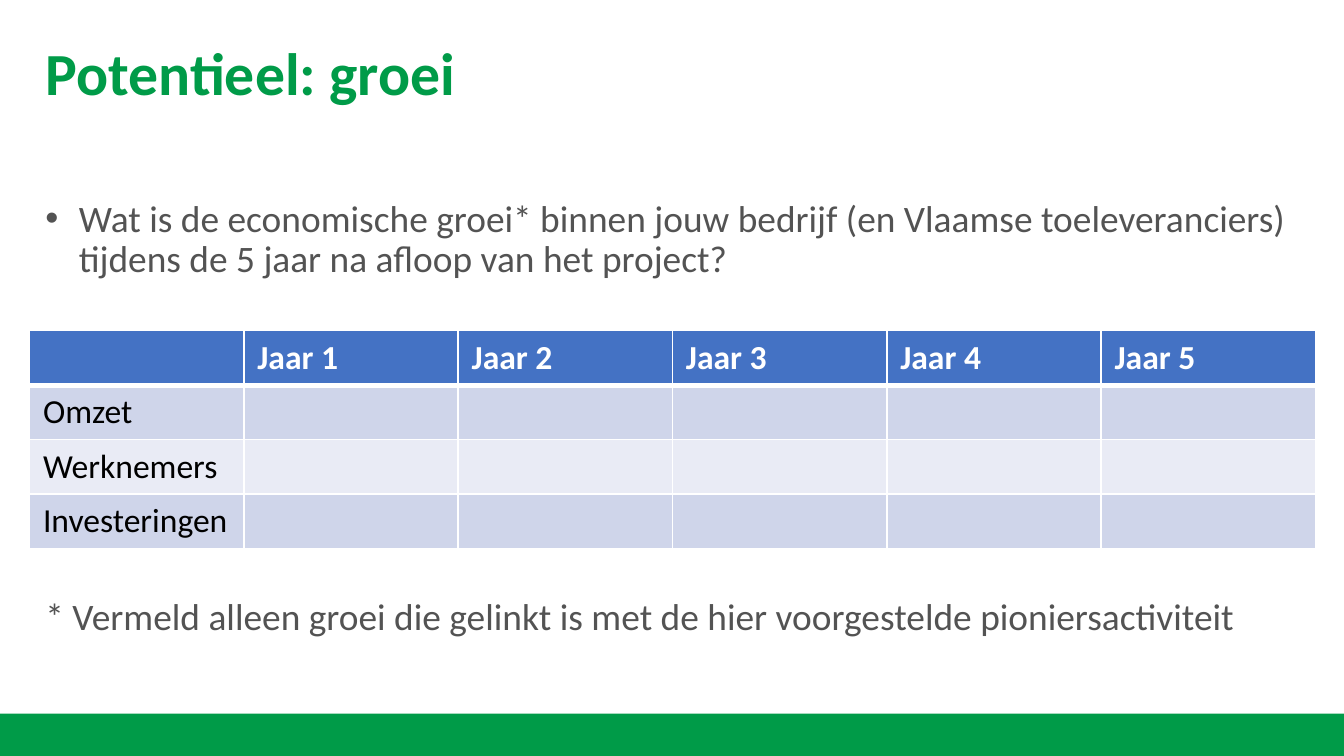
from dataclasses import dataclass

from lxml.etree import SubElement
from pptx import Presentation
from pptx.dml.color import RGBColor
from pptx.enum.shapes import MSO_SHAPE
from pptx.enum.text import MSO_ANCHOR
from pptx.oxml.ns import qn
from pptx.util import Cm, Pt

GREEN, GREY, BLUE, WHITE, BLACK = "009B48", "535353", "4472C4", "FFFFFF", "000000"
BANDS = ("CFD5EA", "E9EBF5")
FONT = "Calibri"
MARGIN, TEXT_W = 0.86, 23.75
COL_W, ROW_H = 4.05, 1.03

HEADER = ["", *(f"Jaar {year}" for year in range(1, 6))]
ROW_LABELS = ["Omzet", "Werknemers", "Investeringen"]


@dataclass
class Box:
    left: float
    top: float
    width: float
    height: float

    def lengths(self):
        return Cm(self.left), Cm(self.top), Cm(self.width), Cm(self.height)


def rgb(value: str) -> RGBColor:
    return RGBColor.from_string(value)


def write(p, text: str, *, size: float, color: str, bold: bool = False,
          bullet: bool = False, before: float = 0, spacing: float = 1) -> None:
    if bullet:
        pPr = p._p.get_or_add_pPr()
        pPr.set("marL", str(Cm(0.63)))
        pPr.set("indent", str(-Cm(0.63)))
        SubElement(pPr, qn("a:buFont"), typeface="Arial")
        SubElement(pPr, qn("a:buChar"), char="•")
    p.line_spacing = spacing
    if before:
        p.space_before = Pt(before)
    r = p.add_run()
    r.text = text
    r.font.name, r.font.size, r.font.bold = FONT, Pt(size), bold
    r.font.color.rgb = rgb(color)


def add_text_frame(s, box: Box, anchor=MSO_ANCHOR.TOP):
    tf = s.shapes.add_textbox(*box.lengths()).text_frame
    tf.word_wrap = True
    tf.vertical_anchor = anchor
    tf.margin_left = tf.margin_right = tf.margin_top = tf.margin_bottom = 0
    return tf


def set_borders(cell, **widths: float) -> None:
    """Draw white borders; the keys are lnL, lnR, lnT and lnB, in that order."""
    tcPr = cell._tc.get_or_add_tcPr()
    for side, width in widths.items():
        ln = SubElement(tcPr, qn(f"a:{side}"), w=str(Pt(width)))
        fill = SubElement(ln, qn("a:solidFill"))
        SubElement(fill, qn("a:srgbClr"), val=WHITE)


def add_growth_table(s, left: float, top: float) -> None:
    rows = [HEADER] + [[label] + [""] * 5 for label in ROW_LABELS]
    box = Box(left, top, COL_W * len(HEADER), ROW_H * len(rows))
    table = s.shapes.add_table(len(rows), len(HEADER), *box.lengths()).table
    for col in table.columns:
        col.width = Cm(COL_W)
    for i, texts in enumerate(rows):
        table.rows[i].height = Cm(ROW_H)
        is_header = i == 0
        for j, text in enumerate(texts):
            cell = table.cell(i, j)
            set_borders(cell, lnL=1, lnR=1, lnT=3 if i == 1 else 1,
                        lnB=3 if is_header else 1)
            cell.fill.solid()
            cell.fill.fore_color.rgb = rgb(BLUE if is_header else BANDS[(i - 1) % 2])
            if text:
                write(cell.text_frame.paragraphs[0], text, size=18, bold=is_header,
                      color=WHITE if is_header else BLACK)


def add_footer_bar(s, box: Box) -> None:
    sp = s.shapes.add_shape(MSO_SHAPE.RECTANGLE, *box.lengths())
    sp.shadow.inherit = False
    sp.fill.solid()
    sp.fill.fore_color.rgb = rgb(GREEN)
    sp.line.fill.background()


def main() -> None:
    prs = Presentation()
    prs.slide_width, prs.slide_height = Cm(25.4), Cm(14.29)
    s = prs.slides.add_slide(prs.slide_layouts[6])

    add_footer_bar(s, Box(0, 13.49, 25.4, 0.8))

    title = add_text_frame(s, Box(MARGIN, 0.79, TEXT_W, 1.3), MSO_ANCHOR.MIDDLE)
    write(title.paragraphs[0], "Potentieel: groei", size=32, color=GREEN,
          bold=True, spacing=0.9)

    body = add_text_frame(s, Box(MARGIN, 3.78, TEXT_W, 9.04))
    write(body.paragraphs[0],
          "Wat is de economische groei* binnen jouw bedrijf (en Vlaamse "
          "toeleveranciers) tijdens de 5 jaar na afloop van het project?",
          size=20, color=GREY, bullet=True, spacing=0.9)
    write(body.add_paragraph(),
          "* Vermeld alleen groei die gelinkt is met de hier voorgestelde "
          "pioniersactiviteit",
          size=20, color=GREY, before=170, spacing=0.9)

    add_growth_table(s, 0.56, 6.25)
    prs.save("out.pptx")


if __name__ == "__main__":
    main()
